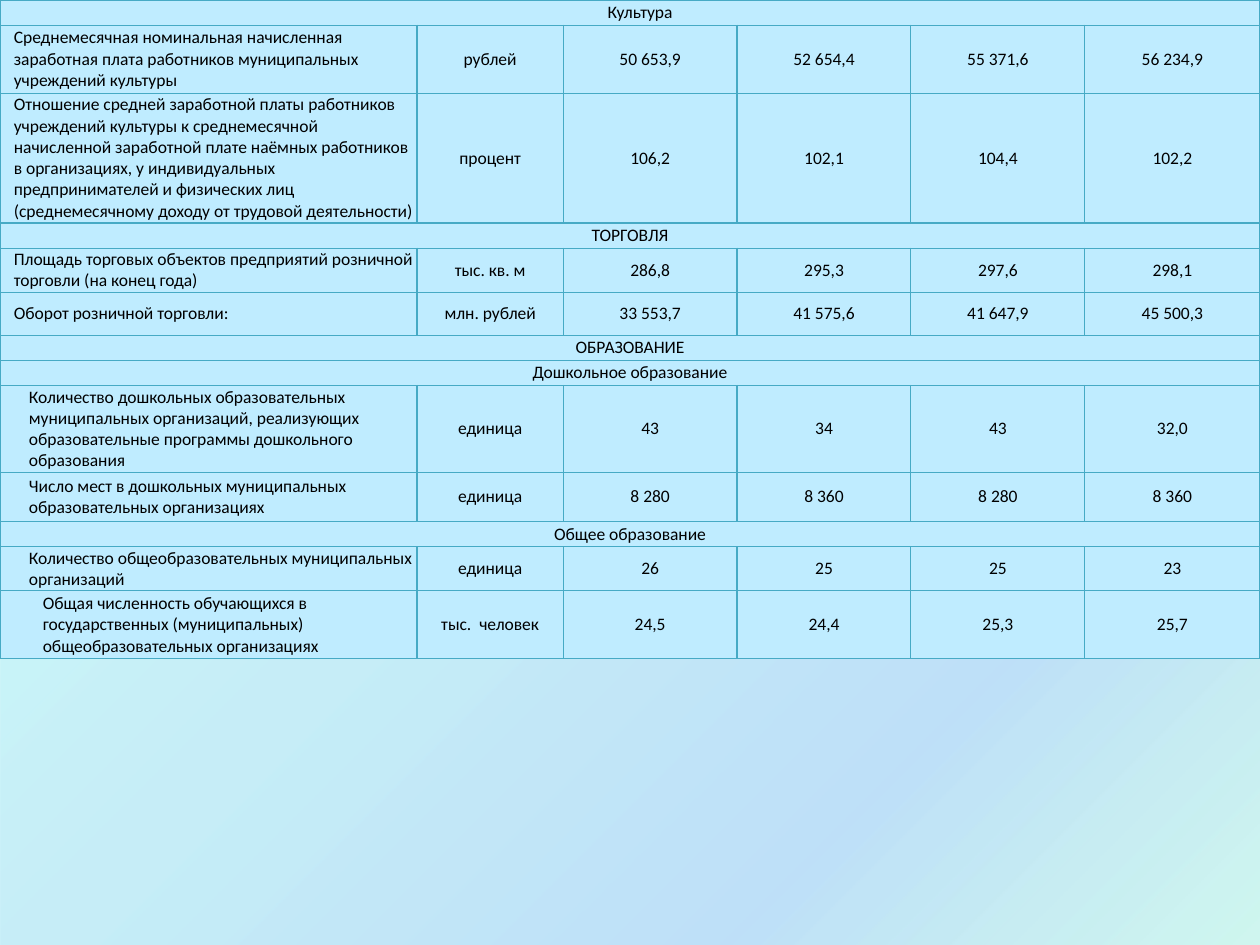
from lxml.etree import SubElement
from pptx import Presentation
from pptx.dml.color import RGBColor
from pptx.enum.shapes import MSO_SHAPE
from pptx.enum.text import MSO_ANCHOR, PP_ALIGN
from pptx.oxml.ns import qn
from pptx.util import Inches, Pt

COLORS = {
    "cell": "BFECFF", "border": "46AAC5", "text": "000000",
    "cyan": "21D6E0", "blue": "0087E6", "green": "03D4A8", "navy": "005CBF",
}
STOPS = [(25, "cyan", 23), (75, "blue", 25), (100, "green", 18), (100, "navy", 26)]
COLS = [3.31, 1.16, 1.38, 1.38, 1.38, 1.39]
INDENTS = [0, 0.11, 0.23, 0.34]
ROWS = [
    (0.2, 0, ["Культура"]),
    (0.54, 1, ["Среднемесячная номинальная начисленная заработная плата работников "
               "муниципальных учреждений культуры",
               "рублей", "50 653,9", "52 654,4", "55 371,6", "56 234,9"]),
    (1.03, 1, ["Отношение средней заработной платы работников учреждений культуры к "
               "среднемесячной начисленной заработной плате наёмных работников в "
               "организациях, у индивидуальных предпринимателей и физических лиц "
               "(среднемесячному доходу от трудовой деятельности)",
               "процент", "106,2", "102,1", "104,4", "102,2"]),
    (0.2, 0, ["ТОРГОВЛЯ"]),
    (0.35, 1, ["Площадь торговых объектов предприятий розничной торговли (на конец года)",
               "тыс. кв. м", "286,8", "295,3", "297,6", "298,1"]),
    (0.34, 1, ["Оборот розничной торговли:",
               "млн. рублей", "33 553,7", "41 575,6", "41 647,9", "45 500,3"]),
    (0.2, 0, ["ОБРАЗОВАНИЕ"]),
    (0.2, 0, ["Дошкольное образование"]),
    (0.69, 2, ["Количество дошкольных образовательных муниципальных организаций, "
               "реализующих образовательные программы дошкольного образования",
               "единица", "43", "34", "43", "32,0"]),
    (0.39, 2, ["Число мест в дошкольных муниципальных образовательных организациях",
               "единица", "8 280", "8 360", "8 280", "8 360"]),
    (0.2, 0, ["Общее образование"]),
    (0.35, 2, ["Количество общеобразовательных муниципальных организаций",
               "единица", "26", "25", "25", "23"]),
    (0.54, 3, ["Общая численность обучающихся в государственных (муниципальных) "
               "общеобразовательных организациях",
               "тыс.  человек", "24,5", "24,4", "25,3", "25,7"]),
]


def write(tf, text, font="Calibri", size=10, color="text", align=PP_ALIGN.CENTER):
    p = tf.paragraphs[0]
    p.alignment = align
    r = p.add_run()
    r.text = text
    r.font.name = font
    r.font.size = Pt(size)
    r.font.color.rgb = RGBColor.from_string(COLORS[color])


class Deck:
    """Holds the style and the current slide."""

    def __init__(self, prs):
        self.border = Pt(0.75)
        self.s = prs.slides.add_slide(prs.slide_layouts[6])

    def backdrop(self, width, height, angle):
        sp = self.s.shapes.add_shape(MSO_SHAPE.RECTANGLE, 0, 0, Inches(width), Inches(height))
        sp.shadow.inherit = False
        sp.line.fill.background()
        sp.fill.gradient()
        sp.fill.gradient_angle = 360 - angle
        stops = sp._element.spPr.find(qn("a:gradFill")).find(qn("a:gsLst"))
        for gs in list(stops):
            stops.remove(gs)
        for pos, color, alpha in STOPS:
            gs = SubElement(stops, qn("a:gs"), pos=str(pos * 1000))
            clr = SubElement(gs, qn("a:srgbClr"), val=COLORS[color])
            SubElement(clr, qn("a:alpha"), val=str(alpha * 1000))

    def cell(self, cell, indent=0):
        cell.margin_left = Inches(indent)
        cell.margin_right = cell.margin_top = cell.margin_bottom = 0
        cell.vertical_anchor = MSO_ANCHOR.MIDDLE
        tcPr = cell._tc.get_or_add_tcPr()
        for side in ("lnL", "lnR", "lnT", "lnB"):
            ln = SubElement(tcPr, qn(f"a:{side}"), w=str(self.border))
            fill = SubElement(ln, qn("a:solidFill"))
            SubElement(fill, qn("a:srgbClr"), val=COLORS["border"])
        cell.fill.solid()
        cell.fill.fore_color.rgb = RGBColor.from_string(COLORS["cell"])
        tcPr.append(tcPr.find(qn("a:solidFill")))

    def table(self, cols, rows):
        height = sum(row[0] for row in rows)
        tbl = self.s.shapes.add_table(
            len(rows), len(cols), 0, 0, Inches(sum(cols)), Inches(height)).table
        tbl.first_row = tbl.horz_banding = False
        for col, width in zip(tbl.columns, cols):
            col.width = Inches(width)
        for i, (height, level, texts) in enumerate(rows):
            tbl.rows[i].height = Inches(height)
            for j in range(len(cols)):
                self.cell(tbl.cell(i, j), INDENTS[level] if j == 0 else 0)
            if level == 0:
                tbl.cell(i, 0).merge(tbl.cell(i, len(cols) - 1))
            for j, text in enumerate(texts):
                align = PP_ALIGN.LEFT if level and j == 0 else PP_ALIGN.CENTER
                write(tbl.cell(i, j).text_frame, text, align=align)
        return tbl


def main():
    prs = Presentation()
    prs.slide_width, prs.slide_height = Inches(10), Inches(7.5)
    deck = Deck(prs)
    deck.backdrop(10, 7.67, 45)
    tbl = deck.table(COLS, ROWS)
    tbl.cell(0, 0).margin_left = Inches(0.16)
    for row in tbl.rows:
        for cell in row.cells:
            if cell.is_spanned:
                cell.text_frame.paragraphs[0].font.size = Pt(10)
    prs.save("out.pptx")


if __name__ == "__main__":
    main()
